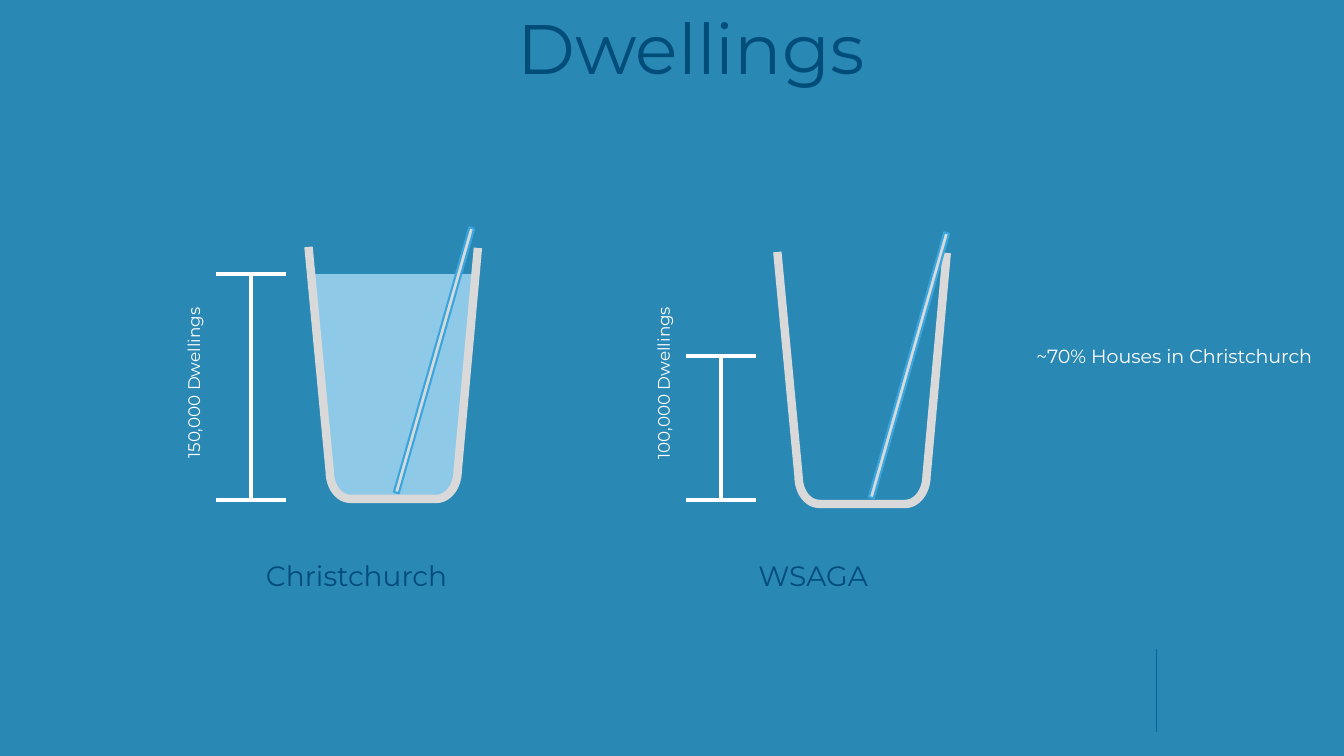
from lxml import etree
from pptx import Presentation
from pptx.dml.color import RGBColor
from pptx.enum import shapes, text
from pptx.oxml.ns import qn
from pptx.util import Inches, Pt

COLORS = {"bg": "2A88B5", "navy": "004D7A", "white": "FFFFFF", "glass": "D9D9D9",
          "water": "BAE5FF", "straw": "39A6DE", "rule": "0067A3"}
FONT = "Montserrat"

# Outlines: two numbers are a corner, six are a Bezier curve
GLASS = [(4.74, 2.46), (4.54, 4.67), (4.54, 4.83, 4.44, 4.95, 4.33, 4.95),
         (3.48, 4.95), (3.36, 4.95, 3.27, 4.83, 3.27, 4.67), (3.06, 2.45)]
WATER = [(3.1, 2.72), (4.7, 2.72), (4.52, 4.71), (4.52, 4.87, 4.43, 4.99, 4.32, 4.99),
         (3.5, 4.99), (3.38, 4.99, 3.29, 4.87, 3.29, 4.71)]
STRAW = (4.28, 2.21, 0.05, 2.73)
GAUGE_BOTTOM, GAUGE_HALF = 4.96, 0.35

# Glass offset, straw offset, gauge x and top, label left, name left
CITIES = [
    {"name": "Christchurch", "count": "150,000 Dwellings", "full": True, "glass": (0, 0),
     "straw": (0, 0), "gauge": (2.49, 2.72), "label_x": 1.15, "name_x": 1.88},
    {"name": "WSAGA", "count": "100,000 Dwellings", "full": False, "glass": (4.65, 0.05),
     "straw": (4.71, 0.05), "gauge": (7.15, 3.53), "label_x": 5.81, "name_x": 6.41},
]


def rgb(name):
    return RGBColor.from_string(COLORS[name])


def flatten(outline, steps=12):
    pts = []
    for seg in outline:
        if len(seg) == 2:
            pts.append(seg)
            continue
        ctrl = [pts[-1], seg[:2], seg[2:4], seg[4:]]
        for i in range(1, steps + 1):
            t = i / steps
            weights = ((1 - t) ** 3, 3 * t * (1 - t) ** 2, 3 * t * t * (1 - t), t ** 3)
            pts.append(tuple(sum(w * c[k] for w, c in zip(weights, ctrl)) for k in (0, 1)))
    return pts


def add_outline(s, outline, offset, close):
    pts = [(Inches(x + offset[0]), Inches(y + offset[1])) for x, y in flatten(outline)]
    fb = s.shapes.build_freeform(*pts[0], scale=1.0)
    fb.add_line_segments(pts[1:], close=close)
    sp = fb.convert_to_shape()
    sp.shadow.inherit = False
    return sp


def add_line(s, x1, y1, x2, y2, color="white", width=3):
    ln = s.shapes.add_connector(shapes.MSO_CONNECTOR.STRAIGHT,
                                *map(Inches, (x1, y1, x2, y2)))
    ln.line.color.rgb, ln.line.width = rgb(color), Pt(width)
    etree.SubElement(ln._element.spPr, qn("a:effectLst"))


def add_text(s, words, box, size, color, spacing=1.0, rotation=0):
    tb = s.shapes.add_textbox(*map(Inches, box))
    tb.rotation = rotation
    tf = tb.text_frame
    tf.word_wrap = True
    p = tf.paragraphs[0]
    p.text, p.alignment, p.line_spacing = words, text.PP_ALIGN.CENTER, spacing
    p.font.name, p.font.size, p.font.color.rgb = FONT, Pt(size), rgb(color)


def add_glass(s, city):
    # Water
    if city["full"]:
        water = add_outline(s, WATER, city["glass"], True)
        water.fill.solid()
        water.fill.fore_color.rgb = rgb("water")
        clr = water._element.spPr.find(qn("a:solidFill"))[0]
        etree.SubElement(clr, qn("a:alpha"), val="70000")
        water.line.fill.background()
    # Glass wall
    glass = add_outline(s, GLASS, city["glass"], False)
    glass.fill.background()
    glass.line.color.rgb, glass.line.width = rgb("glass"), Pt(6)
    # Straw
    x, y, w, h = STRAW
    dx, dy = city["straw"]
    straw = s.shapes.add_shape(shapes.MSO_SHAPE.RECTANGLE,
                               *map(Inches, (x + dx, y + dy, w, h)))
    straw.rotation = 15.9
    straw.shadow.inherit = False
    straw.fill.solid()
    straw.fill.fore_color.rgb = rgb("glass")
    straw.line.color.rgb, straw.line.width = rgb("straw"), Pt(1.5)


def add_gauge(s, city):
    x, top = city["gauge"]
    add_line(s, x, top, x, GAUGE_BOTTOM)
    for y in (top, GAUGE_BOTTOM):
        add_line(s, x - GAUGE_HALF, y, x + GAUGE_HALF, y)
    add_text(s, city["count"], (city["label_x"], 3.45, 1.9, 0.7), 12, "white", 1.1, 270)


def main():
    prs = Presentation()
    prs.slide_width, prs.slide_height = Inches(13.33), Inches(7.5)
    s = prs.slides.add_slide(prs.slide_layouts[6])
    s.background.fill.solid()
    s.background.fill.fore_color.rgb = rgb("bg")

    # Footer rule
    add_line(s, 11.47, 6.44, 11.47, 7.26, "rule", 0.5)

    # Glasses with gauges and names
    for city in CITIES:
        add_glass(s, city)
        add_gauge(s, city)
        add_text(s, city["name"], (city["name_x"], 5.46, 3.31, 0.66), 20, "navy", 1.1)

    # Remark and title
    add_text(s, "~70% Houses in Christchurch", (9.95, 3.37, 3.39, 0.66), 13.6, "white")
    add_text(s, "Dwellings", (1.49, 0, 10.73, 1.09), 50, "navy")
    prs.save("out.pptx")


if __name__ == "__main__":
    main()
